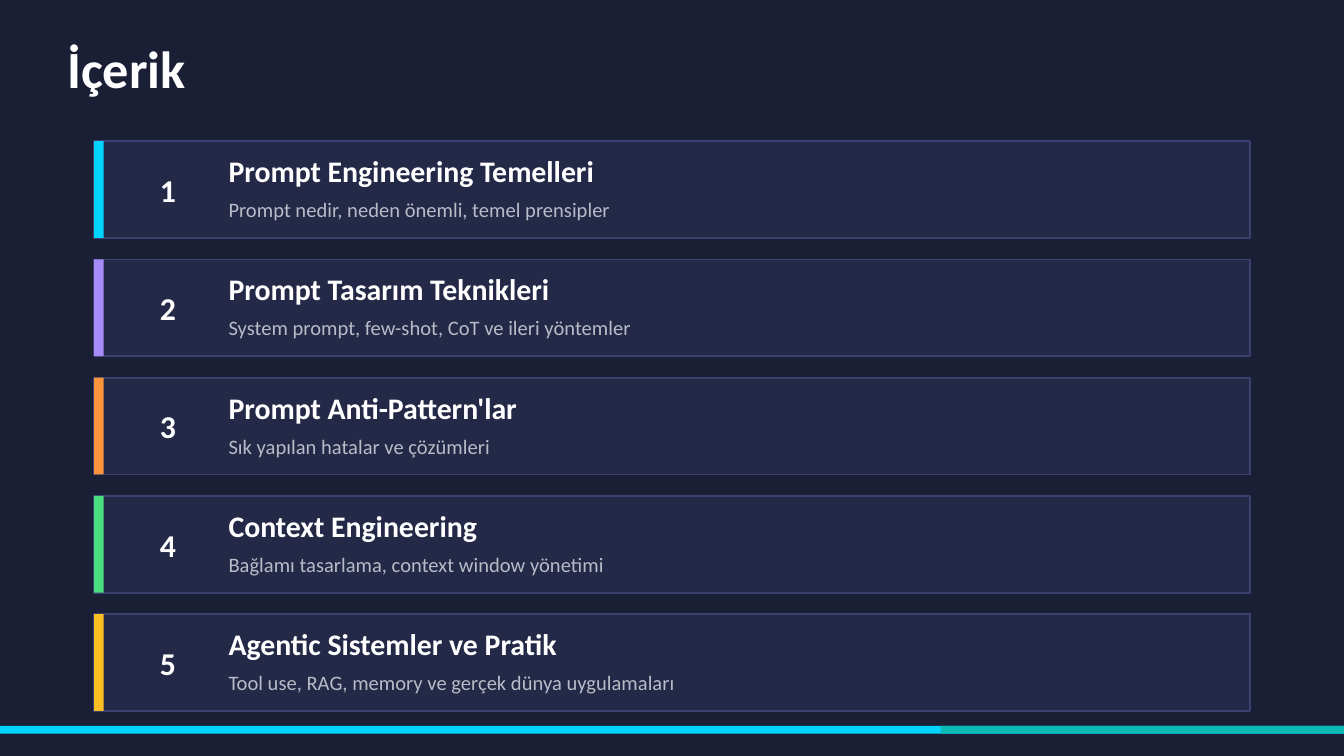
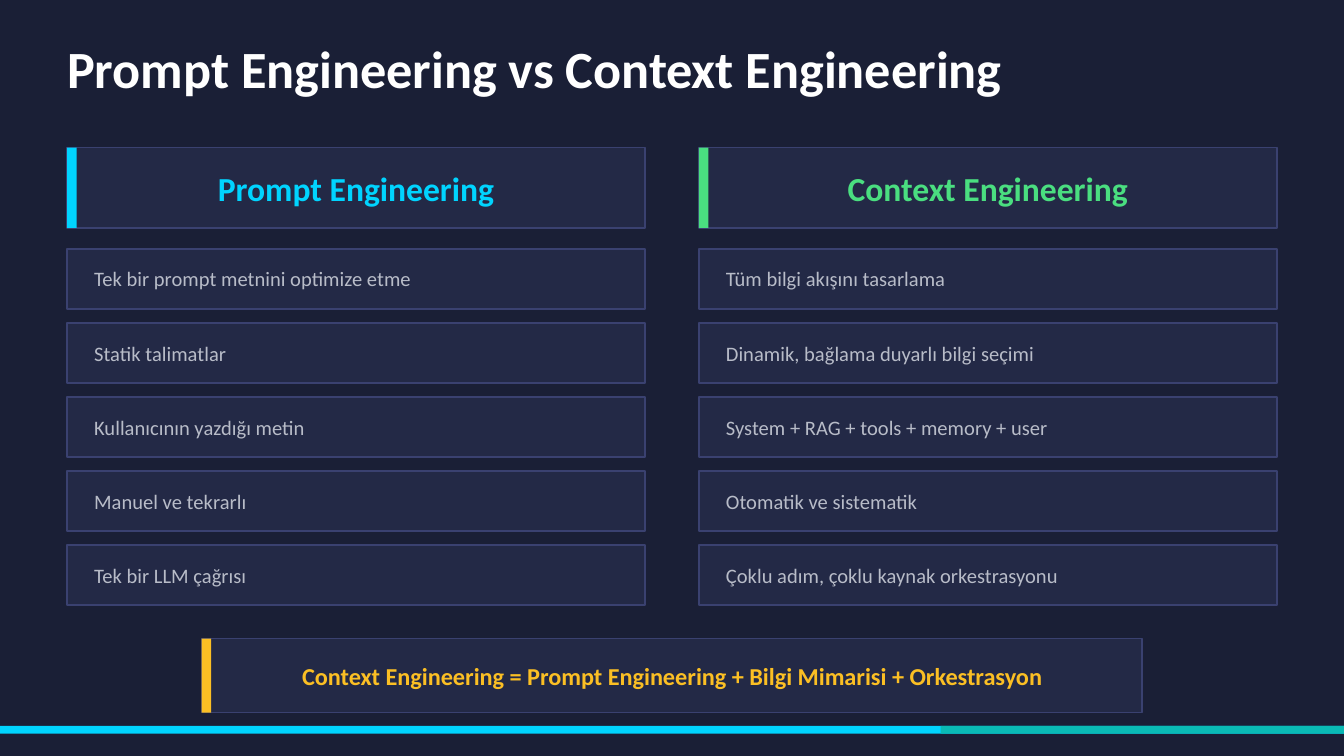
from pptx import Presentation
from pptx.dml.color import RGBColor
from pptx.enum.shapes import MSO_SHAPE
from pptx.enum.text import MSO_ANCHOR, MSO_AUTO_SIZE, PP_ALIGN
from pptx.util import Cm, Pt

RECTANGLE = MSO_SHAPE.RECTANGLE
MIDDLE = MSO_ANCHOR.MIDDLE
NO_AUTOFIT = MSO_AUTO_SIZE.NONE
LEFT, CENTER = PP_ALIGN.LEFT, PP_ALIGN.CENTER

FONT = "Calibri"
COLORS = {
    "background": "1A1F36", "card": "232946", "border": "3A4170",
    "white": "FFFFFF", "muted": "B8BCC8", "cyan": "00D4FF",
    "purple": "A78BFA", "orange": "FB923C", "green": "4ADE80",
    "yellow": "FBBF24", "teal": "0ABAB5",
}
STYLES = {
    "title": {"size": Pt(28), "bold": True},
    "number": {"size": Pt(17), "bold": True},
    "topic": {"size": Pt(16), "bold": True},
    "detail": {"size": Pt(11), "bold": False},
    "column": {"size": Pt(18), "bold": True},
    "formula": {"size": Pt(13), "bold": True},
}

# All lengths are in centimetres.
SLIDE_WIDTH, SLIDE_HEIGHT = 25.4, 14.29
MARGIN = 1.27
ACCENT_WIDTH = 0.18
FOOTER_TOP, FOOTER_HEIGHT, FOOTER_SPLIT = 13.72, 0.15, 17.78

AGENDA_TITLE = "İçerik"
AGENDA = [
    ("Prompt Engineering Temelleri", "Prompt nedir, neden önemli, temel prensipler", "cyan"),
    ("Prompt Tasarım Teknikleri", "System prompt, few-shot, CoT ve ileri yöntemler", "purple"),
    ("Prompt Anti-Pattern'lar", "Sık yapılan hatalar ve çözümleri", "orange"),
    ("Context Engineering", "Bağlamı tasarlama, context window yönetimi", "green"),
    ("Agentic Sistemler ve Pratik", "Tool use, RAG, memory ve gerçek dünya uygulamaları", "yellow"),
]

COMPARISON_TITLE = "Prompt Engineering vs Context Engineering"
COMPARISON = [
    ("Prompt Engineering", "cyan", [
        "Tek bir prompt metnini optimize etme",
        "Statik talimatlar",
        "Kullanıcının yazdığı metin",
        "Manuel ve tekrarlı",
        "Tek bir LLM çağrısı",
    ]),
    ("Context Engineering", "green", [
        "Tüm bilgi akışını tasarlama",
        "Dinamik, bağlama duyarlı bilgi seçimi",
        "System + RAG + tools + memory + user",
        "Otomatik ve sistematik",
        "Çoklu adım, çoklu kaynak orkestrasyonu",
    ]),
]
FORMULA = "Context Engineering = Prompt Engineering + Bilgi Mimarisi + Orkestrasyon"


def rgb(color):
    return RGBColor.from_string(COLORS[color])


def lengths(*values):
    return [Cm(value) for value in values]


def write(box, text, style, color="white", align=LEFT):
    frame = box.text_frame
    frame_format = {
        "word_wrap": True, "auto_size": NO_AUTOFIT, "vertical_anchor": MIDDLE,
        "margin_left": 0, "margin_top": 0, "margin_right": 0, "margin_bottom": 0,
    }
    for name, value in frame_format.items():
        setattr(frame, name, value)
    para = frame.paragraphs[0]
    para.alignment = align
    span = para.add_run()
    span.text = text
    for name, value in {"name": FONT, **STYLES[style]}.items():
        setattr(span.font, name, value)
    span.font.color.rgb = rgb(color)


def add_text(page, area, text, style, color="white", align=LEFT):
    write(page.shapes.add_textbox(*lengths(*area)), text, style, color, align)


def add_bar(page, area, color):
    bar = page.shapes.add_shape(RECTANGLE, *lengths(*area))
    bar.shadow.inherit = False
    bar.fill.solid()
    bar.fill.fore_color.rgb = rgb(color)
    bar.line.fill.background()
    return bar


def add_card(page, area, accent=None):
    """Draw a bordered panel, with a coloured strip on its left if asked."""
    card = add_bar(page, area, "card")
    card.line.color.rgb = rgb("border")
    card.line.width = Pt(1)
    if accent:
        left, top, _, height = area
        add_bar(page, (left, top, ACCENT_WIDTH, height), accent)


def add_label_card(page, area, text, style, color):
    """Draw an accented card with centred text in the accent colour."""
    add_card(page, area, color)
    add_text(page, area, text, style, color, CENTER)


def add_page(deck, title):
    page = deck.slides.add_slide(deck.slide_layouts.get_by_name("Title Only"))
    page.background.fill.solid()
    page.background.fill.fore_color.rgb = rgb("background")
    box = page.shapes.title
    box.left, box.top, box.width, box.height = lengths(
        MARGIN, 0.51, SLIDE_WIDTH - 2 * MARGIN, 1.52)
    write(box, title, "title")
    return page


def add_footer(page):
    add_bar(page, (0, FOOTER_TOP, SLIDE_WIDTH, FOOTER_HEIGHT), "cyan")
    add_bar(page, (FOOTER_SPLIT, FOOTER_TOP, SLIDE_WIDTH - FOOTER_SPLIT, FOOTER_HEIGHT), "teal")


def build_agenda(deck):
    page = add_page(deck, AGENDA_TITLE)
    left, first_top, height, pitch = 1.78, 2.67, 1.83, 2.235
    for index, (topic, detail, accent) in enumerate(AGENDA):
        top = first_top + index * pitch
        add_card(page, (left, top, SLIDE_WIDTH - 2 * left, height), accent)
        add_text(page, (2.54, top + 0.28, 1.27, 1.27), str(index + 1), "number", align=CENTER)
        add_text(page, (4.32, top + 0.15, 18.54, 0.81), topic, "topic")
        add_text(page, (4.32, top + 0.97, 18.54, 0.64), detail, "detail", "muted")
    add_footer(page)


def build_comparison(deck):
    page = add_page(deck, COMPARISON_TITLE)
    width, gap, inset = 10.92, 1.02, 0.51
    first_top, height, pitch = 4.7, 1.14, 1.4
    for column, (heading, color, points) in enumerate(COMPARISON):
        left = MARGIN + column * (width + gap)
        add_label_card(page, (left, 2.79, width, 1.52), heading, "column", color)
        for row, point in enumerate(points):
            top = first_top + row * pitch
            add_card(page, (left, top, width, height))
            add_text(page, (left + inset, top + 0.05, width - 2 * inset, height - 0.1),
                     point, "detail", "muted")
    add_label_card(page, (3.81, 12.07, 17.78, 1.4), FORMULA, "formula", "yellow")
    add_footer(page)


def main():
    deck = Presentation()
    deck.slide_width, deck.slide_height = lengths(SLIDE_WIDTH, SLIDE_HEIGHT)
    build_agenda(deck)
    build_comparison(deck)
    deck.save("out.pptx")


if __name__ == "__main__":
    main()
